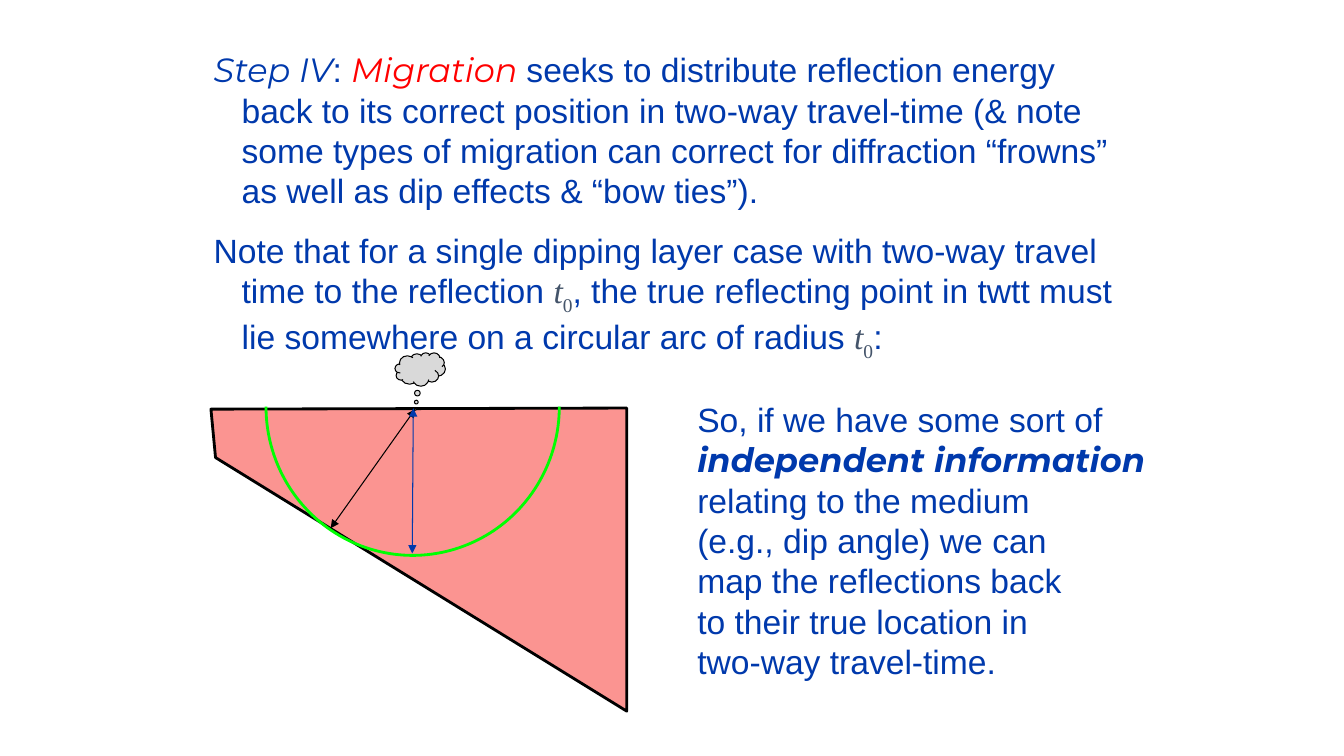
from dataclasses import dataclass

from lxml import etree
from pptx import Presentation
from pptx.dml.color import RGBColor
from pptx.enum.shapes import MSO_CONNECTOR, MSO_SHAPE
from pptx.oxml.ns import qn
from pptx.util import Pt

ARC = MSO_SHAPE.ARC
CLOUD = MSO_SHAPE.CLOUD_CALLOUT
STRAIGHT = MSO_CONNECTOR.STRAIGHT
BLANK_LAYOUT = 6


@dataclass(frozen=True)
class Theme:
    """Colours, fonts and sizes of the slide."""
    blue: str = "0039AC"
    red: str = "FF0000"
    slate: str = "44546A"
    black: str = "000000"
    medium: str = "FB9491"
    arc: str = "00FF02"
    cloud: str = "D9D9D9"
    body_font: str = "Arial"
    accent_font: str = "Montserrat"
    symbol_font: str = "Times New Roman"
    text_size: float = 24
    thick: float = 2
    thin: float = 0.75


THEME = Theme()
BODY = {"face": THEME.body_font, "color": THEME.blue}
ACCENT = {"face": THEME.accent_font, "color": THEME.blue, "italic": True}
STRONG = {**ACCENT, "bold": True}
KEYWORD = {**ACCENT, "color": THEME.red}
SYMBOL = {"face": THEME.symbol_font, "color": THEME.slate, "italic": True}
SUBSCRIPT = {**SYMBOL, "italic": False, "baseline": -25000}
T_ZERO = [("t", SYMBOL), ("0", SUBSCRIPT)]

MIGRATION = [
    [("Step IV", ACCENT), (": ", BODY), ("Migration ", KEYWORD),
     ("seeks to distribute reflection energy", BODY)],
    [("back to its correct position in two-way travel-time (& note", BODY)],
    [("some types of migration can correct for diffraction “frowns”", BODY)],
    [("as well as dip effects & “bow ties”).", BODY)],
]
DIPPING_LAYER = [
    [("Note that for a single dipping layer case with two-way travel", BODY)],
    [("time to the reflection ", BODY), *T_ZERO,
     (", the true reflecting point in twtt must", BODY)],
    [("lie somewhere on a circular arc of radius ", BODY), *T_ZERO, (":", BODY)],
]
CONCLUSION = [
    [("So, if we have some sort of", BODY)],
    [("independent information", STRONG)],
    [("relating to the medium", BODY)],
    [("(e.g., dip angle) we can", BODY)],
    [("map the reflections back", BODY)],
    [("to their true location in", BODY)],
    [("two-way travel-time.", BODY)],
]


def add_run(paragraph, text, face, color, italic=False, bold=False, baseline=0):
    """Append one styled run to a paragraph."""
    run = paragraph.add_run()
    run.text = text
    run.font.name = face
    run.font.size = Pt(THEME.text_size)
    run.font.color.rgb = RGBColor.from_string(color)
    run.font.italic = italic
    run.font.bold = bold
    if baseline:
        run.font._element.set("baseline", str(baseline))


def add_text(slide, box, passages, hanging=0, gap=0):
    """Add a text box with one paragraph per passage, broken into lines."""
    frame = slide.shapes.add_textbox(*map(Pt, box)).text_frame
    frame.word_wrap = True
    for index, lines in enumerate(passages):
        paragraph = frame.add_paragraph() if index else frame.paragraphs[0]
        paragraph.space_before = Pt(gap if index else 0)
        properties = paragraph._p.get_or_add_pPr()
        properties.set("marL", str(Pt(hanging)))
        properties.set("indent", str(-Pt(hanging)))
        for number, line in enumerate(lines):
            if number:
                paragraph.add_line_break()
            for text, style in line:
                add_run(paragraph, text, **style)


def paint(shape, fill, line, width):
    """Set fill and outline, and drop the shadow."""
    shape.shadow.inherit = False
    if fill:
        shape.fill.solid()
        shape.fill.fore_color.rgb = RGBColor.from_string(fill)
    else:
        shape.fill.background()
    shape.line.color.rgb = RGBColor.from_string(line)
    shape.line.width = Pt(width)


def add_preset(slide, kind, box, adjustments, fill, line, width):
    """Add a painted preset shape with its adjustments."""
    shape = slide.shapes.add_shape(kind, *map(Pt, box))
    for index, value in enumerate(adjustments):
        shape.adjustments[index] = value
    paint(shape, fill, line, width)


def add_polygon(slide, corners, fill, line, width):
    """Add a painted closed polygon."""
    points = [(Pt(x), Pt(y)) for x, y in corners]
    builder = slide.shapes.build_freeform(*points[0])
    builder.add_line_segments(points[1:], close=True)
    paint(builder.convert_to_shape(), fill, line, width)


def add_double_arrow(slide, start, end, color):
    """Add a thin straight line with a triangle at both ends."""
    arrow = slide.shapes.add_connector(STRAIGHT, *map(Pt, (*start, *end)))
    arrow.line.color.rgb = RGBColor.from_string(color)
    arrow.line.width = Pt(THEME.thin)
    outline = arrow.line._get_or_add_ln()
    for tip in ("a:headEnd", "a:tailEnd"):
        etree.SubElement(outline, qn(tip), type="triangle")
    etree.SubElement(arrow._element.spPr, qn("a:effectLst"))


def main():
    """Build the migration slide and save it."""
    deck = Presentation()
    deck.slide_width, deck.slide_height = Pt(960), Pt(540)
    slide = deck.slides.add_slide(deck.slide_layouts[BLANK_LAYOUT])

    dipping_medium = [(150.7, 292.3), (447.7, 291.5), (447.7, 508), (154, 326.9)]
    add_polygon(slide, dipping_medium, THEME.medium, THEME.black, THEME.thick)
    add_preset(slide, ARC, (190, 184.3, 209.5, 212.4), (0, 108),
               None, THEME.arc, THEME.thick)
    add_preset(slide, CLOUD, (282.2, 252, 36, 23.8), (-0.094, 1.193),
               THEME.cloud, THEME.black, THEME.thin)
    add_double_arrow(slide, (236.2, 377.3), (296.6, 292.3), THEME.black)
    add_double_arrow(slide, (294.5, 395.3), (295.2, 291.6), THEME.blue)

    add_text(slide, (145.5, 31.7, 669, 225.4), [MIGRATION, DIPPING_LAYER],
             hanging=20, gap=13.8)
    add_text(slide, (491, 281.5, 347, 211), [CONCLUSION])
    deck.save("out.pptx")


if __name__ == "__main__":
    main()
